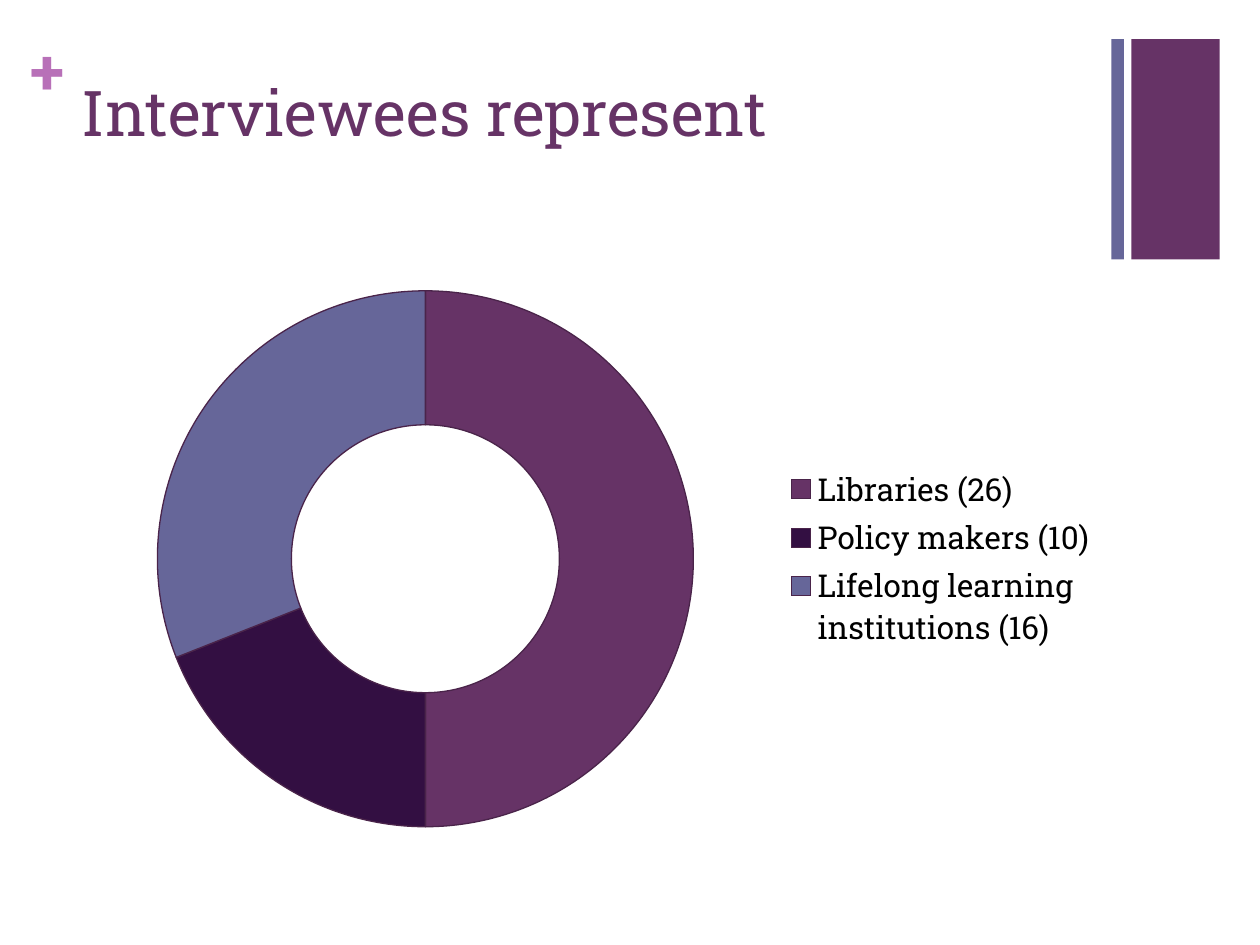
from pptx import Presentation
from pptx.chart.data import CategoryChartData
from pptx.dml.color import RGBColor
from pptx.enum.chart import XL_CHART_TYPE, XL_LEGEND_POSITION
from pptx.enum.shapes import MSO_SHAPE
from pptx.enum.text import MSO_ANCHOR, PP_ALIGN
from pptx.util import Inches, Pt

FONT = "Roboto Slab"
PLUM, SLATE, ORCHID, OUTLINE = "663366", "666699", "B870B8", "4A244A"
TITLE = "Interviewees represent"
GROUPS = [
    ("Libraries (26)", 50, PLUM),
    ("Policy makers (10)", 19, "330F42"),
    ("Lifelong learning institutions (16)", 31, SLATE),
]
BARS = [(8.98, 0.7, PLUM), (8.82, 0.1, SLATE)]
BAR_TOP, BAR_HEIGHT = 0.31, 1.75
LEFT, WIDTH = 0.55, 8.26


def inches(*lengths):
    return [Inches(length) for length in lengths]


def paint(color_format, color):
    color_format.rgb = RGBColor.from_string(color)


def style_font(font, color, **values):
    for name, value in {"name": FONT, **values}.items():
        setattr(font, name, value)
    paint(font.color, color)


def write(shape, text, color, margins, **values):
    frame = shape.text_frame
    for name, value in {"word_wrap": True, "vertical_anchor": MSO_ANCHOR.TOP, **margins}.items():
        setattr(frame, name, value)
    para = frame.paragraphs[0]
    para.alignment = PP_ALIGN.LEFT
    span = para.add_run()
    span.text = text
    style_font(span.font, color, size=Pt(36), **values)


def add_bar(page, left, width, color):
    bar = page.shapes.add_shape(MSO_SHAPE.RECTANGLE, *inches(left, BAR_TOP, width, BAR_HEIGHT))
    bar.shadow.inherit = False
    bar.fill.solid()
    paint(bar.fill.fore_color, color)
    bar.line.fill.background()


def add_doughnut(page):
    names, shares, colors = zip(*GROUPS)
    data = CategoryChartData()
    data.categories = names
    data.add_series("Series 1", shares)
    chart = page.shapes.add_chart(
        XL_CHART_TYPE.DOUGHNUT, *inches(LEFT, 2.17, WIDTH, 4.53), data
    ).chart
    style_font(chart.font, "000000", size=Pt(18))
    chart.has_title = False
    chart.has_legend = True
    chart.legend.position = XL_LEGEND_POSITION.RIGHT
    chart.legend.include_in_layout = False
    plot = chart.plots[0]
    plot.vary_by_categories = True
    for index, color in enumerate(colors):
        slice_format = plot.series[0].points[index].format
        slice_format.fill.solid()
        paint(slice_format.fill.fore_color, color)
        slice_format.line.width = Pt(0.75)
        paint(slice_format.line.color, OUTLINE)


def main():
    """Build the slide on the groups the interviewees represent."""
    deck = Presentation()
    deck.slide_width, deck.slide_height = inches(10, 7.5)
    page = deck.slides.add_slide(deck.slide_layouts[5])
    for bar in BARS:
        add_bar(page, *bar)
    plus = page.shapes.add_textbox(*inches(0.24, 0.25, 0.29, 0.61))
    sides = ("margin_left", "margin_top", "margin_right", "margin_bottom")
    write(plus, "+", ORCHID, dict.fromkeys(sides, 0), bold=True)
    title = page.shapes.title
    title.left, title.top, title.width, title.height = inches(LEFT, 0.53, WIDTH, 1.22)
    write(title, TITLE, PLUM, {})
    add_doughnut(page)
    deck.save("out.pptx")


if __name__ == "__main__":
    main()
